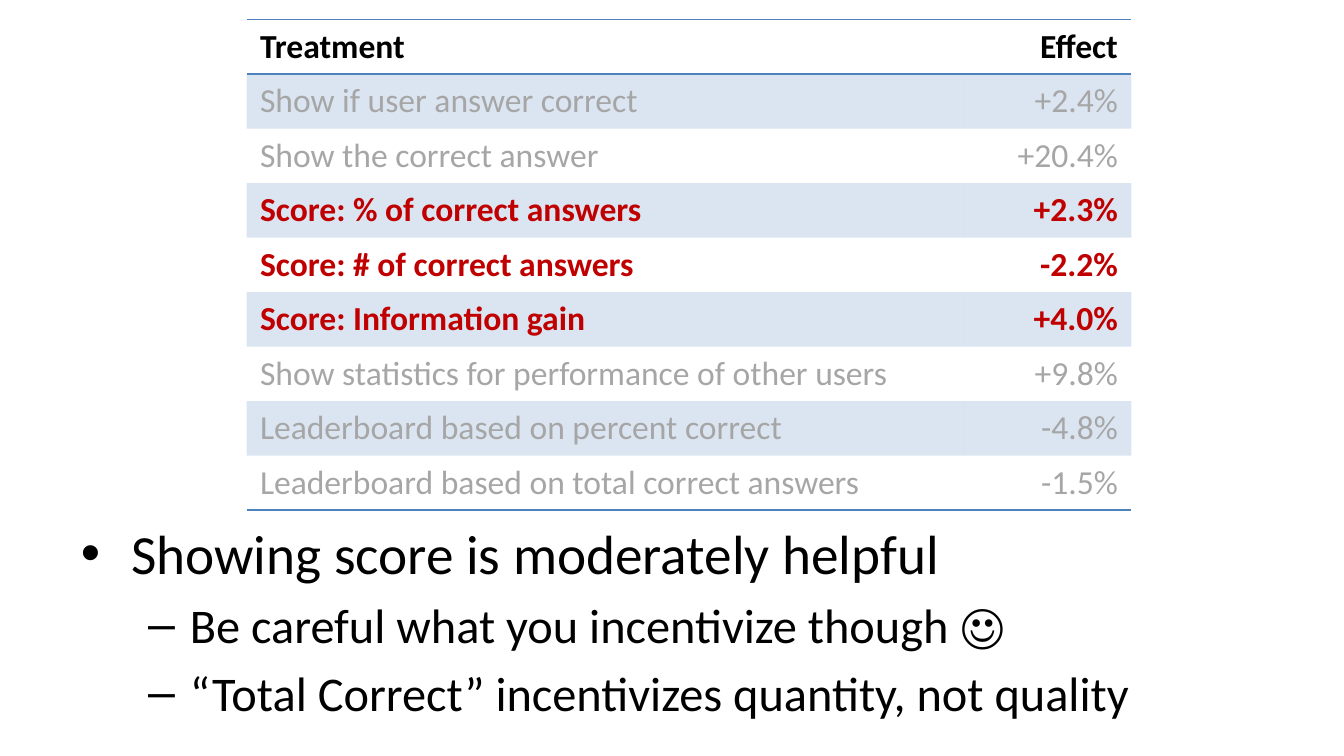
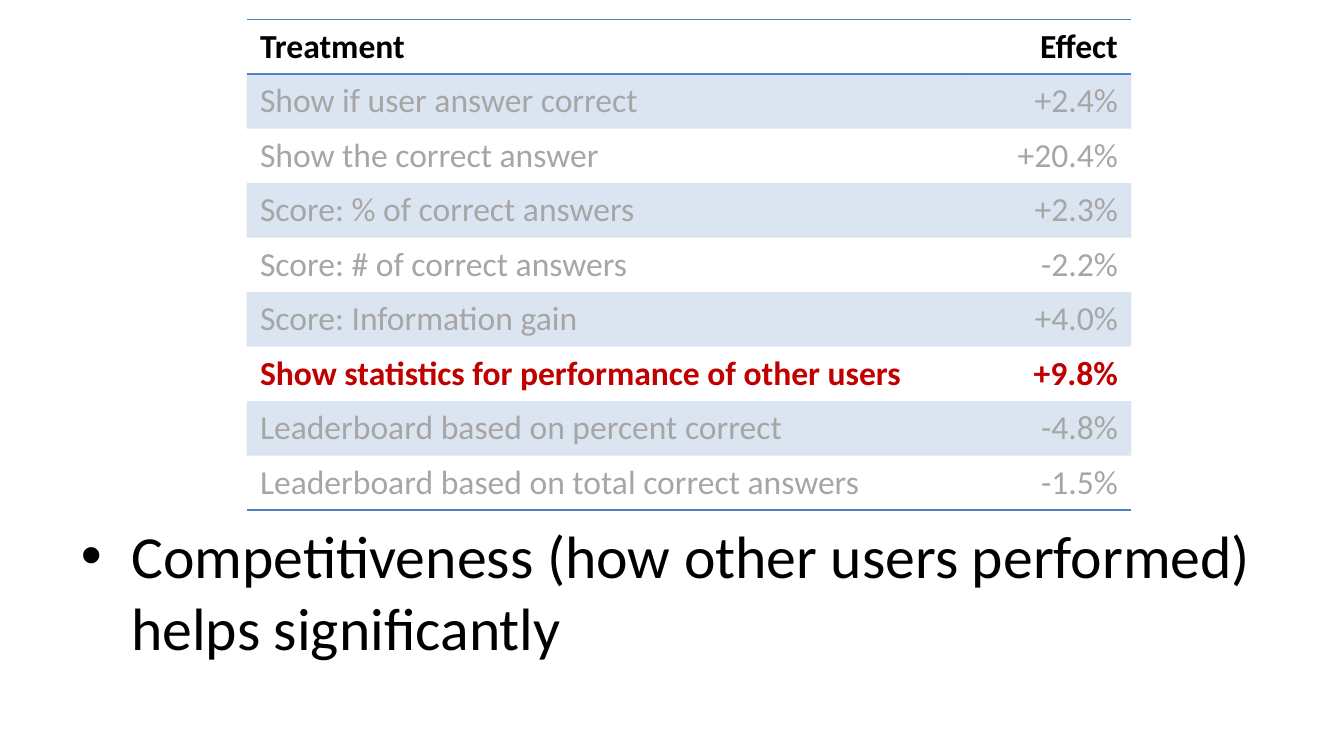
import pptx
import pptx.util
import pptx.dml.color
import pptx.enum.shapes
import pptx.enum.text
import pptx.oxml
import pptx.oxml.ns

Cm = pptx.util.Cm
Pt = pptx.util.Pt
RGB = pptx.dml.color.RGBColor
ALIGN = pptx.enum.text.PP_ALIGN
RECT = pptx.enum.shapes.MSO_SHAPE.RECTANGLE

BLACK = RGB(0x00, 0x00, 0x00)
WHITE = RGB(0xFF, 0xFF, 0xFF)
GRAY = RGB(0xA6, 0xA6, 0xA6)
RED = RGB(0xC0, 0x00, 0x00)
BLUE = RGB(0x4F, 0x81, 0xBD)

FONT = "Calibri"
PLAIN_STYLE = "{2D5ABB26-0587-4C30-8999-92F81FD0307C}"
WIDTHS = (Cm(13.54), Cm(3.18))
ROW_HIGH = Cm(1.03)
VEIL_WIDE = Cm(17.42)
ALIGNS = (ALIGN.LEFT, ALIGN.RIGHT)

HEAD = {"size": Pt(18), "bold": True, "color": BLACK}
DIM = {"size": Pt(18), "bold": False, "color": GRAY}
HOT = {"size": Pt(18), "bold": True, "color": RED}

# Bullet, left margin and hanging indent for each level
LEVELS = (("•", Cm(0.95), Cm(0.95)), ("–", Cm(2.06), Cm(0.79)))

ROWS = (
    ("Treatment", "Effect"),
    ("Show if user answer correct", "+2.4%"),
    ("Show the correct answer", "+20.4%"),
    ("Score: % of correct answers", "+2.3%"),
    ("Score: # of correct answers", "-2.2%"),
    ("Score: Information gain", "+4.0%"),
    ("Show statistics for performance of other users", "+9.8%"),
    ("Leaderboard based on percent correct", "-4.8%"),
    ("Leaderboard based on total correct answers", "-1.5%"),
)

# Highlighted rows, veils as (left, top, height), points as (level, size, text)
SLIDES = (
    ((3, 4, 5), ((4.23, 7.14, 1.59), (4.65, 4.29, 1.27)), (
        (0, 29.6, "Showing score is moderately helpful"),
        (1, 25.9, "Be careful what you incentivize though ☺"),
        (1, 25.9, "“Total Correct” incentivizes quantity, not quality"),
    )),
    ((6,), ((4.23, 7.78, 0.95),), (
        (0, 32, "Competitiveness (how other users performed) helps significantly"),
    )),
)


def add_node(parent, tag, **attrs):
    node = pptx.oxml.ns.qn(tag)
    child = parent.makeelement(node, {k: str(v) for k, v in attrs.items()})
    parent.append(child)
    return child


def write(para, text, style):
    run = para.add_run()
    run.text = text
    run.font.name = FONT
    for key, value in style.items():
        if key == "color":
            run.font.color.rgb = value
        else:
            setattr(run.font, key, value)


def rule(cell, tag):
    """Draw one cell border; call before the cell is filled."""
    line = add_node(cell._tc.get_or_add_tcPr(), tag, w=Pt(1))
    fill = add_node(line, "a:solidFill")
    add_node(fill, "a:srgbClr", val=BLUE)


def tint(fill, props, color, percent):
    """Fill with a color at the given opacity; props holds the fill's XML."""
    fill.solid()
    fill.fore_color.rgb = color
    solid = props.find(pptx.oxml.ns.qn("a:solidFill"))
    add_node(solid[0], "a:alpha", val=percent * 1000)


def add_veil(slide, left, top, height):
    veil = slide.shapes.add_shape(
        RECT, Cm(left), Cm(top), VEIL_WIDE, Cm(height))
    veil.shadow.inherit = False
    veil.line.fill.background()
    tint(veil.fill, veil._element.spPr, WHITE, 78)


def add_grid(slide, hot):
    frame = slide.shapes.add_table(
        len(ROWS), len(WIDTHS), Cm(4.66), Cm(0.37),
        sum(WIDTHS), ROW_HIGH * len(ROWS))
    table = frame.table
    table.horz_banding = False
    style_id = table._tbl.tblPr.find(pptx.oxml.ns.qn("a:tableStyleId"))
    style_id.text = PLAIN_STYLE
    for column, width in zip(table.columns, WIDTHS):
        column.width = width
    for r, row in enumerate(ROWS):
        table.rows[r].height = ROW_HIGH
        style = HEAD if r == 0 else HOT if r in hot else DIM
        for c, text in enumerate(row):
            cell = table.cell(r, c)
            para = cell.text_frame.paragraphs[0]
            para.alignment = ALIGNS[c]
            write(para, text, style)
            if r == 0:
                rule(cell, "a:lnT")
            if r in (0, len(ROWS) - 1):
                rule(cell, "a:lnB")
            if r % 2:
                tint(cell.fill, cell._tc.tcPr, BLUE, 20)
            else:
                cell.fill.background()


def add_points(slide, points):
    box = slide.shapes.add_textbox(Cm(1.28), Cm(9.69), Cm(22.86), Cm(3.96))
    frame = box.text_frame
    frame.word_wrap = True
    for i, (level, size, text) in enumerate(points):
        para = frame.add_paragraph() if i else frame.paragraphs[0]
        para.level = level
        para.space_before = Pt(size * 0.2)
        mark, margin, hang = LEVELS[level]
        props = para._p.get_or_add_pPr()
        props.set("marL", str(margin))
        props.set("indent", str(-hang))
        add_node(props, "a:buFont", typeface="Arial")
        add_node(props, "a:buChar", char=mark)
        write(para, text, {"size": Pt(size), "color": BLACK})


def main():
    deck = pptx.Presentation()
    deck.slide_width = Cm(25.4)
    deck.slide_height = Cm(14.29)
    for hot, veils, points in SLIDES:
        slide = deck.slides.add_slide(deck.slide_layouts[6])
        add_points(slide, points)
        for veil in veils:
            add_veil(slide, *veil)
        add_grid(slide, hot)
    deck.save("out.pptx")


if __name__ == "__main__":
    main()
